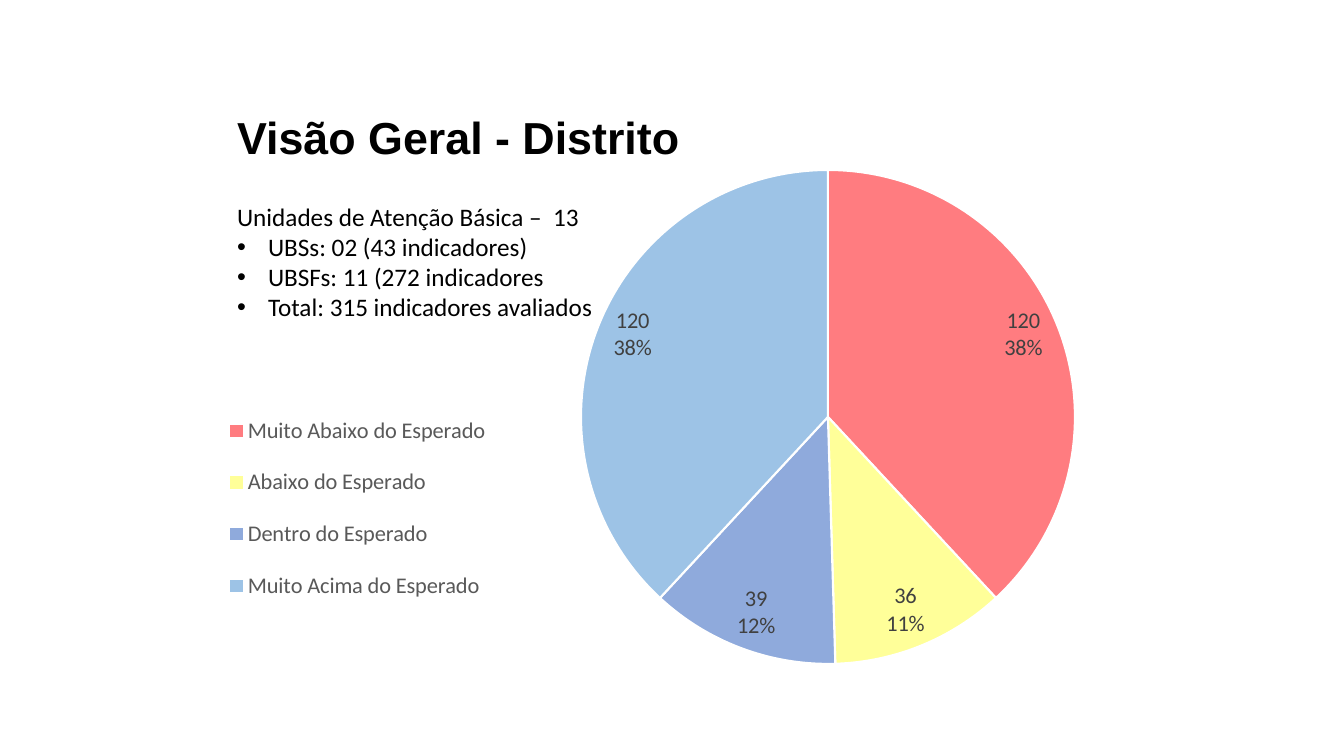
from lxml import etree
from pptx import Presentation
from pptx import util as u
from pptx.chart.data import CategoryChartData
from pptx.dml.color import RGBColor
from pptx.enum import chart as kinds, text
from pptx.oxml import ns

THEME = {
    "black": "000000", "white": "FFFFFF", "label": "404040", "legend": "595959",
    "head": ("Arial", 32), "body": ("Calibri", 18), "chart": ("Calibri", 16),
}
SCALE = 914400 / 100.8
PARTS = [
    ("Muito Abaixo do Esperado", 120, "FF7C80"),
    ("Abaixo do Esperado", 36, "FFFF99"),
    ("Dentro do Esperado", 39, "8FAADC"),
    ("Muito Acima do Esperado", 120, "9DC3E6"),
]
LINES = [
    "Unidades de Atenção Básica –  13",
    "UBSs: 02 (43 indicadores)",
    "UBSFs: 11 (272 indicadores",
    "Total: 315 indicadores avaliados",
]


def style(font, role, color, bold=False):
    font.name, size = THEME[role]
    font.size = u.Pt(size)
    font.bold = bold
    font.color.rgb = RGBColor.from_string(THEME[color])


def place(item, index, box, frame, inner=False):
    """Pin a chart part to a pixel box, as shares of the chart frame."""
    for old in item.findall(ns.qn("c:layout")):
        item.remove(old)
    layout = etree.Element(ns.qn("c:layout"))
    manual = etree.SubElement(layout, ns.qn("c:manualLayout"))
    left, top, wide, high = frame
    x, y, w, h = box
    shares = {"x": (x - left) / wide, "y": (y - top) / high, "w": w / wide, "h": h / high}
    rules = {"layoutTarget": "inner"} if inner else {}
    rules.update(xMode="edge", yMode="edge")
    rules.update({key: f"{share:.4f}" for key, share in shares.items()})
    for key, value in rules.items():
        etree.SubElement(manual, ns.qn(f"c:{key}")).set("val", value)
    item.insert(index, layout)


deck = Presentation()
deck.slide_width, deck.slide_height = [round(n * SCALE) for n in (1344, 756)]
slide = deck.slides.add_slide(deck.slide_layouts[1])
title, body = slide.placeholders

# Title and list
for shape, box in ((title, (227, 105, 467, 64)), (body, (227, 196, 392, 132))):
    shape.left, shape.top, shape.width, shape.height = [round(n * SCALE) for n in box]
    frame = shape.text_frame
    frame.word_wrap = False
    frame.auto_size = text.MSO_AUTO_SIZE.SHAPE_TO_FIT_TEXT
    frame.vertical_anchor = text.MSO_ANCHOR.TOP

head = title.text_frame.paragraphs[0]
head.alignment = text.PP_ALIGN.LEFT
run = head.add_run()
run.text = "Visão Geral - Distrito"
style(run.font, "head", "black", bold=True)

for i, line in enumerate(LINES):
    para = body.text_frame.add_paragraph() if i else body.text_frame.paragraphs[0]
    props = para._p.get_or_add_pPr()
    indent = round(31 * SCALE) if i else 0
    props.set("marL", str(indent))
    props.set("indent", str(-indent))
    if i:
        etree.SubElement(props, ns.qn("a:buFont")).set("typeface", "Arial")
        etree.SubElement(props, ns.qn("a:buChar")).set("char", "•")
    else:
        etree.SubElement(props, ns.qn("a:buNone"))
    para.space_before = u.Pt(0)
    run = para.add_run()
    run.text = line
    style(run.font, "body", "black")

# Pie chart, behind the text
data = CategoryChartData()
data.categories = [name for name, _, _ in PARTS]
data.add_series("Series 1", [value for _, value, _ in PARTS])
area = (168, 156, 1042, 574)
holder = slide.shapes.add_chart(
    kinds.XL_CHART_TYPE.PIE, *[round(n * SCALE) for n in area], data)
slide.shapes._spTree.insert(2, holder._element)
chart = holder.chart
chart.has_title = False
style(chart.font, "chart", "black")

plot = chart.plots[0]
plot.vary_by_categories = True
series = plot.series[0]
for i, (_, _, color) in enumerate(PARTS):
    form = series.points[i].format
    form.fill.solid()
    form.fill.fore_color.rgb = RGBColor.from_string(color)
    form.line.color.rgb = RGBColor.from_string(THEME["white"])
    form.line.width = u.Pt(1.5)

labels = series.data_labels
labels.show_value = labels.show_percentage = True
labels.position = kinds.XL_LABEL_POSITION.BEST_FIT
style(labels.font, "chart", "label")
split = etree.Element(ns.qn("c:separator"))
split.text = "\n"
labels._element.find(ns.qn("c:showBubbleSize")).addnext(split)

chart.has_legend = True
legend = chart.legend
legend.position = kinds.XL_LEGEND_POSITION.LEFT
legend.include_in_layout = False
style(legend.font, "chart", "legend")
place(legend._element, 1, (220, 393, 275, 231), area)
place(chart._chartSpace.chart.plotArea, 0, (581, 170, 494, 494), area, inner=True)

deck.save("out.pptx")
